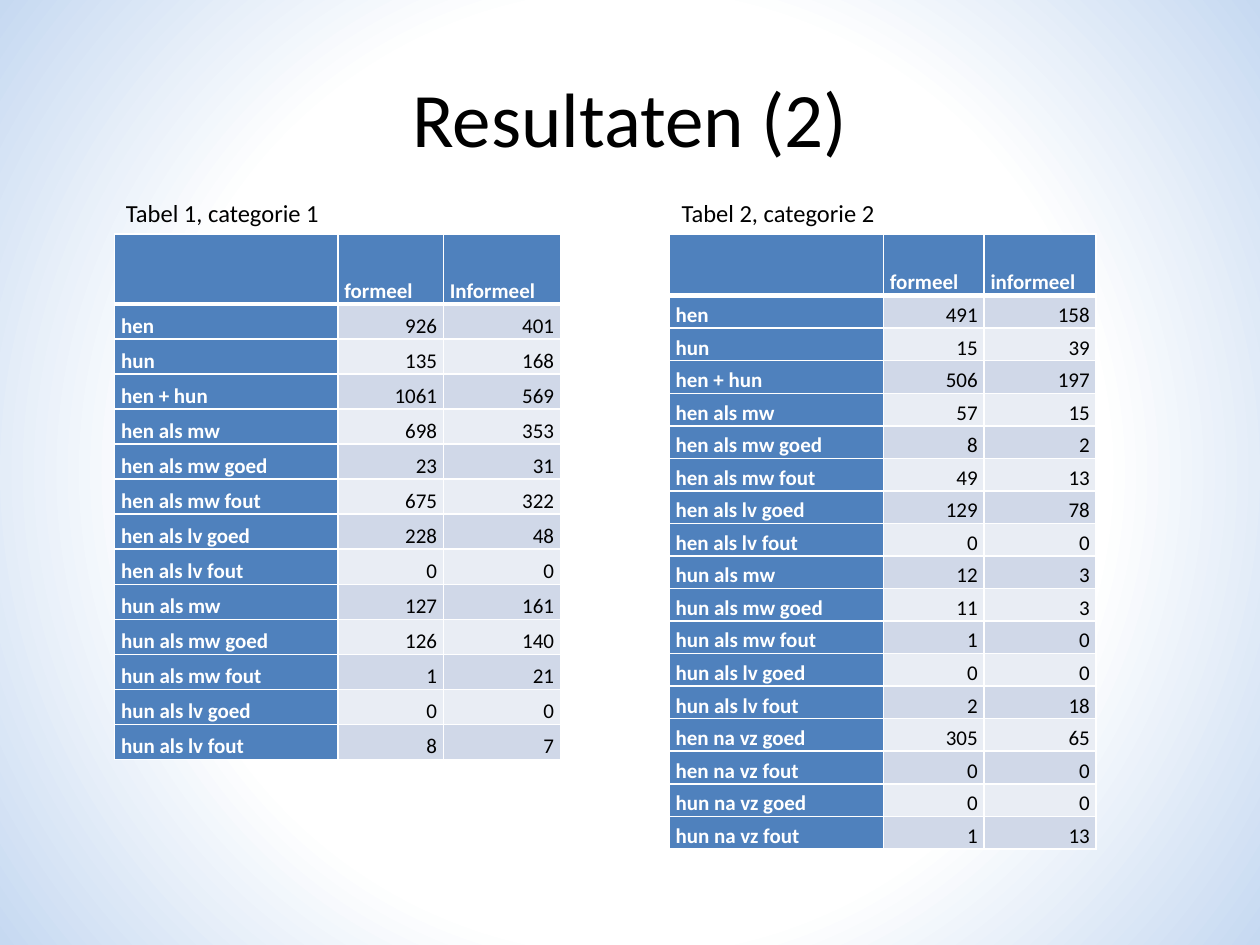
from lxml import etree
from pptx import Presentation
from pptx.dml.color import RGBColor
from pptx.enum.text import MSO_ANCHOR, PP_ALIGN
from pptx.oxml import parse_xml
from pptx.oxml.ns import nsdecls, qn
from pptx.util import Cm, Pt

LEFT, CENTER, RIGHT = PP_ALIGN.LEFT, PP_ALIGN.CENTER, PP_ALIGN.RIGHT
BOTTOM, MIDDLE, TOP = MSO_ANCHOR.BOTTOM, MSO_ANCHOR.MIDDLE, MSO_ANCHOR.TOP
COLORS = {
    "white": "FFFFFF",
    "black": "000000",
    "edge": "C6D9F1",
    "header": "4F81BD",
    "odd": "D0D8E8",
    "even": "E9EDF4",
}

LABELS = [
    "hen", "hun", "hen + hun",
    "hen als mw", "hen als mw goed", "hen als mw fout",
    "hen als lv goed", "hen als lv fout",
    "hun als mw", "hun als mw goed", "hun als mw fout",
    "hun als lv goed", "hun als lv fout",
    "hen na vz goed", "hen na vz fout", "hun na vz goed", "hun na vz fout",
]
TABLES = [
    {
        "caption": "Tabel 1, categorie 1", "caption_box": (2.29, 4.9),
        "left": 2.31, "widths": (4.5, 2.13, 2.36),
        "height": 10.59, "header_height": 1.41,
        "heads": ("", "formeel", "Informeel"),
        "formal": [926, 135, 1061, 698, 23, 675, 228, 0, 127, 126, 1, 0, 8],
        "informal": [401, 168, 569, 353, 31, 322, 48, 0, 161, 140, 21, 0, 7],
    },
    {
        "caption": "Tabel 2, categorie 2", "caption_box": (13.49, 5.79),
        "left": 13.49, "widths": (4.32, 2.03, 2.26),
        "height": 12.4, "header_height": 1.24,
        "heads": ("", "formeel", "informeel"),
        "formal": [491, 15, 506, 57, 8, 49, 129, 0, 12, 11, 1, 0, 2,
                   305, 0, 0, 1],
        "informal": [158, 39, 197, 15, 2, 13, 78, 0, 3, 3, 0, 0, 18,
                     65, 0, 0, 13],
    },
]


def write(tf, text, size, color="black", bold=False, align=LEFT, anchor=TOP):
    tf.text = text
    tf.word_wrap = True
    tf.vertical_anchor = anchor
    p = tf.paragraphs[0]
    p.alignment = align
    p.font.size = Pt(size)
    for r in p.runs:
        r.font.name = "Calibri"
        r.font.size = Pt(size)
        r.font.bold = bold
        r.font.color.rgb = RGBColor.from_string(COLORS[color])
    return p


def set_borders(cell, top, bottom):
    """Draw white cell borders; top and bottom widths are in points."""
    tcPr = cell._tc.get_or_add_tcPr()
    sides = {"lnL": 1, "lnR": 1, "lnT": top, "lnB": bottom}
    for i, (tag, width) in enumerate(sides.items()):
        ln = etree.Element(qn(f"a:{tag}"), w=str(Pt(width)))
        fill = etree.SubElement(ln, qn("a:solidFill"))
        etree.SubElement(fill, qn("a:srgbClr"), val=COLORS["white"])
        tcPr.insert(i, ln)


prs = Presentation()
prs.slide_width, prs.slide_height = Cm(25.4), Cm(19.05)
s = prs.slides.add_slide(prs.slide_layouts[6])

# Radial background: white centre, pale blue edge
stops = "".join(
    f'<a:gs pos="{pos * 1000}"><a:srgbClr val="{COLORS[name]}"/></a:gs>'
    for pos, name in ((0, "white"), (60, "white"), (100, "edge"))
)
s._element.cSld.insert(0, parse_xml(
    f'<p:bg {nsdecls("p", "a")}><p:bgPr><a:gradFill rotWithShape="1">'
    f'<a:gsLst>{stops}</a:gsLst><a:path path="circle">'
    '<a:fillToRect l="50000" t="50000" r="50000" b="50000"/></a:path>'
    '</a:gradFill><a:effectLst/></p:bgPr></p:bg>'
))

title = s.shapes.add_textbox(Cm(1.27), Cm(0.76), Cm(22.86), Cm(3.18))
write(title.text_frame, "Resultaten (2)", 44, align=CENTER, anchor=MIDDLE)

for data in TABLES:
    rows = [data["heads"], *zip(LABELS, data["formal"], data["informal"])]
    table = s.shapes.add_table(
        len(rows), 3, Cm(data["left"]), Cm(4.72),
        Cm(sum(data["widths"])), Cm(data["height"]),
    ).table
    for column, width in zip(table.columns, data["widths"]):
        column.width = Cm(width)
    body_height = (data["height"] - data["header_height"]) / (len(rows) - 1)

    for i, values in enumerate(rows):
        table.rows[i].height = Cm(body_height if i else data["header_height"])
        for j, value in enumerate(values):
            cell = table.cell(i, j)
            is_head = i == 0 or j == 0
            p = write(cell.text_frame, str(value), 12,
                      color="white" if is_head else "black", bold=is_head,
                      align=LEFT if is_head else RIGHT)
            p.line_spacing = 1.07
            cell.vertical_anchor = BOTTOM
            cell.margin_left = cell.margin_right = Cm(0.13)
            cell.margin_top = cell.margin_bottom = 0
            band = "header" if is_head else "odd" if i % 2 else "even"
            cell.fill.solid()
            cell.fill.fore_color.rgb = RGBColor.from_string(COLORS[band])
            set_borders(cell, top=3 if i == 1 else 1, bottom=1 if i else 3)

for data in TABLES:
    left, width = data["caption_box"]
    caption = s.shapes.add_textbox(Cm(left), Cm(3.86), Cm(width), Cm(0.86))
    write(caption.text_frame, data["caption"], 14)

prs.save("out.pptx")
